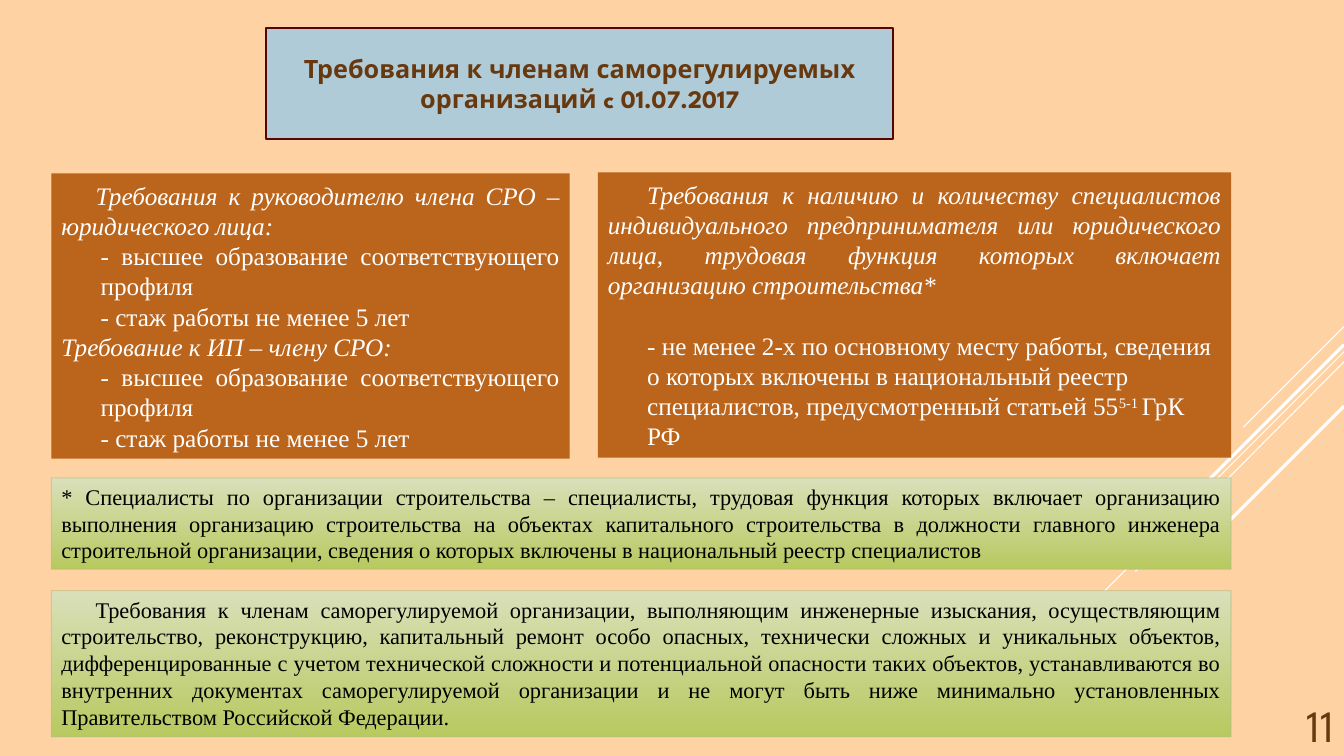
from dataclasses import dataclass

from lxml import etree
from pptx import Presentation
from pptx import util as u
from pptx.dml.color import RGBColor
from pptx.enum import shapes, text
from pptx.oxml import ns


@dataclass(frozen=True)
class Theme:
    background: str = "FFD2A4"
    heading_fill: str = "AFCBD7"
    heading_line: str = "570402"
    brown: str = "68380F"
    panel: str = "BB641B"
    white: str = "FFFFFF"
    black: str = "000000"
    note_top: str = "DADFBA"
    note_bottom: str = "B7C95F"
    note_line: str = "B8BE89"
    heading_font: str = "League Spartan"
    body_font: str = "Times New Roman"
    body_size: int = 18
    note_size: int = 16
    number_size: int = 32


@dataclass(frozen=True)
class Box:
    left: float
    top: float
    width: float
    height: float

    def lengths(self) -> tuple:
        return tuple(map(u.Inches, (self.left, self.top, self.width, self.height)))


@dataclass(frozen=True)
class Phrase:
    words: str
    italic: bool = False
    superscript: bool = False


@dataclass(frozen=True)
class Line:
    phrases: tuple
    margin: float = 0
    first_indent: float = 0
    space_before: float = 0
    align: text.PP_ALIGN = text.PP_ALIGN.JUSTIFY


@dataclass(frozen=True)
class Ray:
    start_y: float
    end_x: float
    end_y: float
    weight: float


THEME = Theme()
SLIDE_WIDTH, SLIDE_HEIGHT = 13.33, 7.5
LIST_MARGIN = 0.39

RAYS = (
    Ray(3.24, 12.33, 4.24, 0.75),
    Ray(3.49, 10.07, 6.75, 0.75),
    Ray(3.59, 11.26, 5.67, 0.75),
    Ray(3.42, 11.42, 5.33, 2.25),
    Ray(4.03, 11.94, 5.42, 2.25),
)

EDUCATION_AND_EXPERIENCE = (
    Line((Phrase("- высшее образование соответствующего профиля"),), margin=LIST_MARGIN),
    Line((Phrase("- стаж работы не менее 5 лет"),), margin=LIST_MARGIN),
)

PANELS = (
    (Box(0.51, 1.72, 5.14, 2.83), (
        Line((Phrase("Требования к руководителю члена СРО – юридического лица:", italic=True),),
             first_indent=0.34),
        *EDUCATION_AND_EXPERIENCE,
        Line((Phrase("Требование к ИП – члену СРО:", italic=True),)),
        *EDUCATION_AND_EXPERIENCE,
    )),
    (Box(5.93, 1.71, 6.28, 2.83), (
        Line((Phrase("Требования к наличию и количеству специалистов индивидуального "
                     "предпринимателя или юридического лица, трудовая функция которых "
                     "включает организацию строительства*", italic=True),),
             first_indent=LIST_MARGIN),
        Line((Phrase("- не менее 2-х по основному месту работы, сведения о которых включены "
                     "в национальный реестр специалистов, предусмотренный статьей 55"),
              Phrase("5-1 ", superscript=True),
              Phrase("ГрК РФ")),
             margin=LIST_MARGIN, space_before=21.6, align=text.PP_ALIGN.LEFT),
    )),
)

NOTES = (
    (Box(0.51, 4.74, 11.7, 0.91), Line((Phrase(
        "* Специалисты по организации строительства – специалисты, трудовая функция которых "
        "включает организацию выполнения организацию строительства на объектах капитального "
        "строительства в должности главного инженера строительной организации, сведения "
        "о которых включены в национальный реестр специалистов"),))),
    (Box(0.51, 5.86, 11.7, 1.45), Line((Phrase(
        "Требования к членам саморегулируемой организации, выполняющим инженерные изыскания, "
        "осуществляющим строительство, реконструкцию, капитальный ремонт особо опасных, "
        "технически сложных и уникальных объектов, дифференцированные с учетом технической "
        "сложности и потенциальной опасности таких объектов, устанавливаются во внутренних "
        "документах саморегулируемой организации и не могут быть ниже минимально "
        "установленных Правительством Российской Федерации."),), first_indent=0.34)),
)


def color(value: str) -> RGBColor:
    return RGBColor.from_string(value)


def write(shape, lines: tuple, size: int, ink: str, font: str = THEME.body_font,
          bold: bool = False, anchor=text.MSO_ANCHOR.MIDDLE) -> None:
    frame = shape.text_frame
    frame.word_wrap = True
    frame.auto_size = text.MSO_AUTO_SIZE.NONE
    frame.vertical_anchor = anchor
    for index, line in enumerate(lines):
        paragraph = frame.add_paragraph() if index else frame.paragraphs[0]
        paragraph.alignment = line.align
        paragraph.space_before = u.Pt(line.space_before)
        properties = paragraph._p.get_or_add_pPr()
        properties.set("marL", str(u.Inches(line.margin)))
        properties.set("indent", str(u.Inches(line.first_indent)))
        for phrase in line.phrases:
            run = paragraph.add_run()
            run.text = phrase.words
            run.font.name = font
            run.font.size = u.Pt(size)
            run.font.bold = bold
            run.font.italic = phrase.italic
            run.font.color.rgb = color(ink)
            if phrase.superscript:
                run._r.get_or_add_rPr().set("baseline", "30000")


def add_ray(slide, ray: Ray) -> None:
    points = map(u.Inches, (SLIDE_WIDTH, ray.start_y, ray.end_x, ray.end_y))
    connector = slide.shapes.add_connector(shapes.MSO_CONNECTOR.STRAIGHT, *points)
    connector.line.color.rgb = color(THEME.white)
    connector.line.width = u.Pt(ray.weight)
    etree.SubElement(connector._element.spPr, ns.qn("a:effectLst"))


def add_heading(slide) -> None:
    title = slide.shapes.title
    title.left, title.top, title.width, title.height = Box(2.64, 0.28, 6.22, 1.1).lengths()
    # Rounded outline follows the position in the shape properties
    outline = etree.Element(ns.qn("a:prstGeom"), prst="roundRect")
    etree.SubElement(outline, ns.qn("a:avLst"))
    title._element.spPr.insert(1, outline)
    title.fill.solid()
    title.fill.fore_color.rgb = color(THEME.heading_fill)
    title.line.color.rgb = color(THEME.heading_line)
    title.line.width = u.Pt(1.25)
    heading = Line((Phrase("Требования к членам саморегулируемых организаций c 01.07.2017"),),
                   align=text.PP_ALIGN.CENTER)
    write(title, (heading,), THEME.body_size, THEME.brown, THEME.heading_font, bold=True)


def add_rectangle(slide, box: Box):
    shape = slide.shapes.add_shape(shapes.MSO_SHAPE.RECTANGLE, *box.lengths())
    shape.shadow.inherit = False
    return shape


def add_panel(slide, box: Box, lines: tuple) -> None:
    panel = add_rectangle(slide, box)
    panel.fill.solid()
    panel.fill.fore_color.rgb = color(THEME.panel)
    panel.line.fill.background()
    write(panel, lines, THEME.body_size, THEME.white)


def add_note(slide, box: Box, line: Line) -> None:
    note = add_rectangle(slide, box)
    note.fill.gradient()
    note.fill.gradient_angle = 270
    for stop, shade in zip(note.fill.gradient_stops, (THEME.note_top, THEME.note_bottom)):
        stop.color.rgb = color(shade)
    note.line.color.rgb = color(THEME.note_line)
    note.line.width = u.Pt(0.75)
    line_color = note.line._ln.find(".//" + ns.qn("a:srgbClr"))
    etree.SubElement(line_color, ns.qn("a:alpha"), val="60000")
    write(note, (line,), THEME.note_size, THEME.black, anchor=text.MSO_ANCHOR.TOP)


def main() -> None:
    presentation = Presentation()
    presentation.slide_width = u.Inches(SLIDE_WIDTH)
    presentation.slide_height = u.Inches(SLIDE_HEIGHT)
    slide = presentation.slides.add_slide(presentation.slide_layouts[5])
    slide.background.fill.solid()
    slide.background.fill.fore_color.rgb = color(THEME.background)

    # Diagonal rays, then the heading and the content over them
    for ray in RAYS:
        add_ray(slide, ray)
    add_heading(slide)
    for box, lines in PANELS:
        add_panel(slide, box, lines)
    for box, line in NOTES:
        add_note(slide, box, line)

    # Page number
    number = slide.shapes.add_textbox(*Box(12.08, 6.77, 1.25, 0.73).lengths())
    write(number, (Line((Phrase("11"),), align=text.PP_ALIGN.RIGHT),), THEME.number_size,
          THEME.brown, THEME.heading_font, anchor=text.MSO_ANCHOR.BOTTOM)
    presentation.save("out.pptx")


if __name__ == "__main__":
    main()
